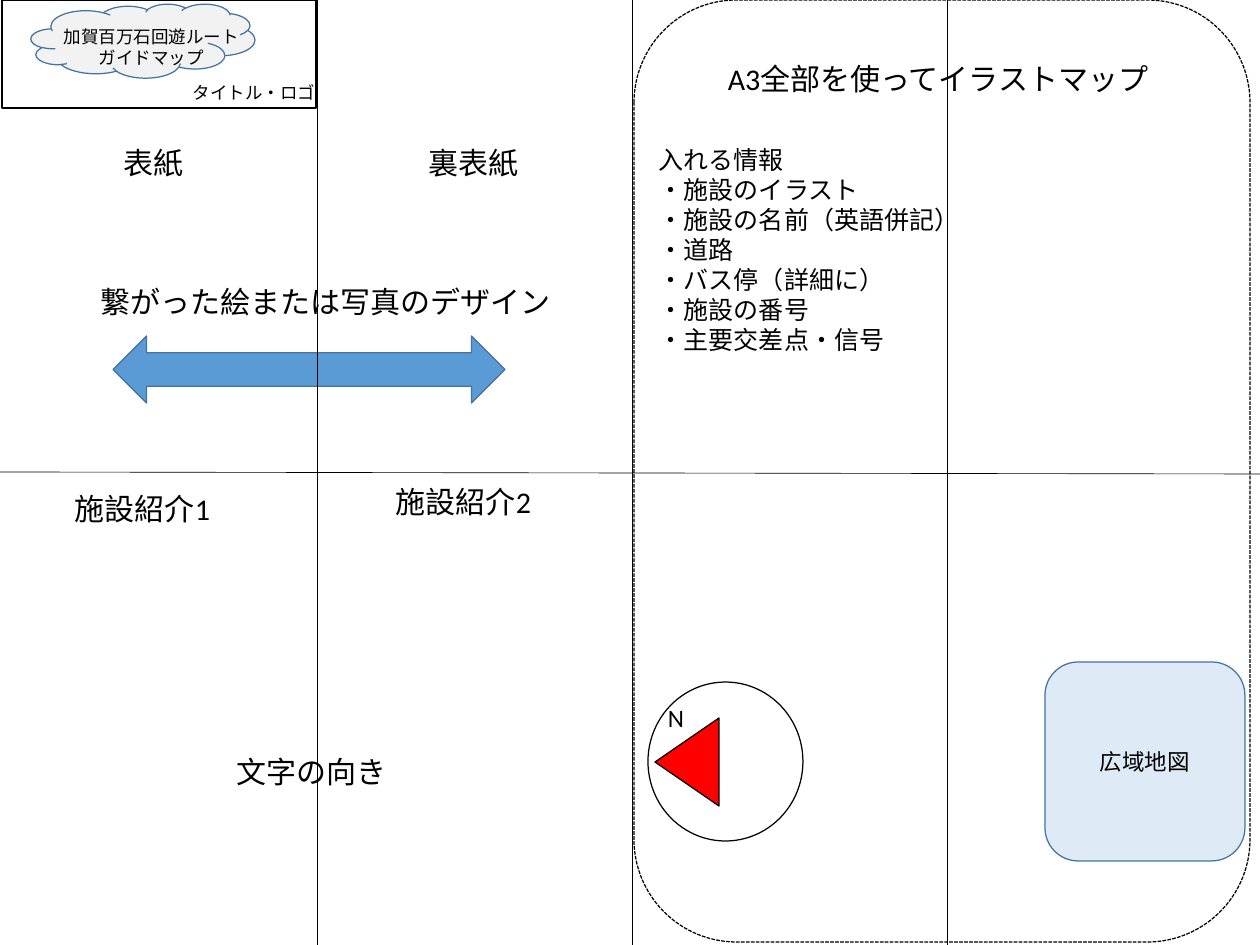
from dataclasses import dataclass

from lxml import etree
from pptx import Presentation
from pptx import util as u
from pptx.dml.color import RGBColor
from pptx.enum import dml, shapes, text
from pptx.oxml.ns import qn

PX = 10160
WIDTH, HEIGHT = 1260, 945
SHAPE = shapes.MSO_SHAPE
CENTER = text.PP_ALIGN.CENTER


@dataclass(frozen=True)
class Theme:
    """Hold the colours, font and type sizes of the leaflet plan."""
    font: str = "Calibri"
    ink: str = "000000"
    edge: str = "43739E"
    cloud: str = "F2F2F2"
    arrow: str = "5B9BD5"
    area: str = "DEEBF7"
    north: str = "FF0000"
    heading: int = 24
    body: int = 20
    label: int = 18
    small: int = 14


T = Theme()


def px(*lengths):
    """Turn px lengths into EMU."""
    return [u.Emu(n * PX) for n in lengths]


def write(tf, lines, size=T.heading, align=None):
    """Fill a text frame with one paragraph per line."""
    tf.word_wrap = True
    for i, line in enumerate(lines):
        p = tf.paragraphs[0] if i == 0 else tf.add_paragraph()
        if align is not None:
            p.alignment = align
        r = p.add_run()
        r.text = line
        r.font.name = T.font
        r.font.size = u.Pt(size)
        r.font.color.rgb = RGBColor.from_string(T.ink)


def add_text(s, x, y, w, h, *lines, **style):
    """Add a text box that grows with its lines."""
    tf = s.shapes.add_textbox(*px(x, y, w, h)).text_frame
    write(tf, lines, **style)
    tf.auto_size = text.MSO_AUTO_SIZE.SHAPE_TO_FIT_TEXT


def add_shape(s, kind, x, y, w, h, fill=None, line=T.ink):
    """Add an outlined preset shape, hollow unless a fill is given."""
    sp = s.shapes.add_shape(kind, *px(x, y, w, h))
    sp.shadow.inherit = False
    if fill:
        sp.fill.solid()
        sp.fill.fore_color.rgb = RGBColor.from_string(fill)
    else:
        sp.fill.background()
    sp.line.color.rgb = RGBColor.from_string(line)
    sp.line.width = u.Pt(1)
    return sp


def add_line(s, x1, y1, x2, y2):
    """Add a thin fold line."""
    c = s.shapes.add_connector(shapes.MSO_CONNECTOR.STRAIGHT, *px(x1, y1, x2, y2))
    c.line.color.rgb = RGBColor.from_string(T.ink)
    c.line.width = u.Pt(0.5)
    etree.SubElement(c._element.spPr, qn("a:effectLst"))


def title_block(s, x, y, w, h):
    """Draw the title and logo frame."""
    add_shape(s, SHAPE.CLOUD, x + 29, y + 4, 224, 74, T.cloud, T.edge)
    add_text(s, x + 52, y + 22, 195, 51, "加賀百万石回遊ルート", "ガイドマップ",
             size=T.small, align=CENTER)
    add_shape(s, SHAPE.RECTANGLE, x, y, w, h)
    add_text(s, x + 182, y + 78, 142, 31, "タイトル・ロゴ", size=T.small)


def covers(s, x, y):
    """Draw the front and back covers with their shared design."""
    title_block(s, x + 2, y, 314, 108)
    add_text(s, x + 115, y + 140, 79, 45, "表紙")
    add_text(s, x + 420, y + 140, 109, 45, "裏表紙")
    add_text(s, x + 92, y + 279, 485, 45, "繋がった絵または写真のデザイン")
    add_shape(s, SHAPE.LEFT_RIGHT_ARROW, x + 113, y + 336, 392, 67, T.arrow, T.edge)


def facilities(s, x, y):
    """Draw the two facility pages."""
    add_text(s, x + 66, y + 13, 155, 45, "施設紹介1")
    add_text(s, x + 387, y + 6, 155, 45, "施設紹介2")
    add_text(s, x + 148, y + 276, 327, 45, "文字の向き", align=CENTER)


def folds(s, w, h):
    """Draw the fold lines of the sheet."""
    add_line(s, -3, h // 2, w, h // 2 + 2)
    for i in (1, 2, 3):
        x = round(w * i / 4 + 2)
        add_line(s, x, 0, x, h + 4)


def compass(s, x, y, w, h):
    """Draw a compass that points left to north."""
    add_shape(s, SHAPE.OVAL, x, y, w, h)
    sp = add_shape(s, SHAPE.ISOSCELES_TRIANGLE, x - 5, y + 48, 88, 64, T.north)
    sp.rotation = 270
    add_text(s, x + 11, y + 16, 34, 40, "N", size=T.body)


def map_side(s, x, y, w, h):
    """Draw the illustrated map half in its dashed frame."""
    add_text(s, x + 85, y + 56, 445, 45, "A3全部を使ってイラストマップ")
    add_text(s, x + 16, y + 140, 321, 282, "入れる情報", "・施設のイラスト",
             "・施設の名前（英語併記）", "・道路", "・バス停（詳細に）",
             "・施設の番号", "・主要交差点・信号", size=T.body)
    sp = add_shape(s, SHAPE.ROUNDED_RECTANGLE, x + 411, y + 662, 200, 199, T.area, T.edge)
    write(sp.text_frame, ["広域地図"], size=T.label, align=CENTER)
    sp.text_frame.vertical_anchor = text.MSO_ANCHOR.MIDDLE
    compass(s, x + 14, y + 682, 155, 159)
    frame = add_shape(s, SHAPE.ROUNDED_RECTANGLE, x, y, w, h)
    frame.line.dash_style = dml.MSO_LINE.SQUARE_DOT


def main():
    """Build and save the leaflet plan."""
    prs = Presentation()
    prs.slide_width, prs.slide_height = px(WIDTH, HEIGHT)
    s = prs.slides.add_slide(prs.slide_layouts[6])
    covers(s, 0, 0)
    facilities(s, 0, 473)
    folds(s, WIDTH, HEIGHT)
    map_side(s, 634, 0, 616, 942)
    prs.save("out.pptx")


if __name__ == "__main__":
    main()
